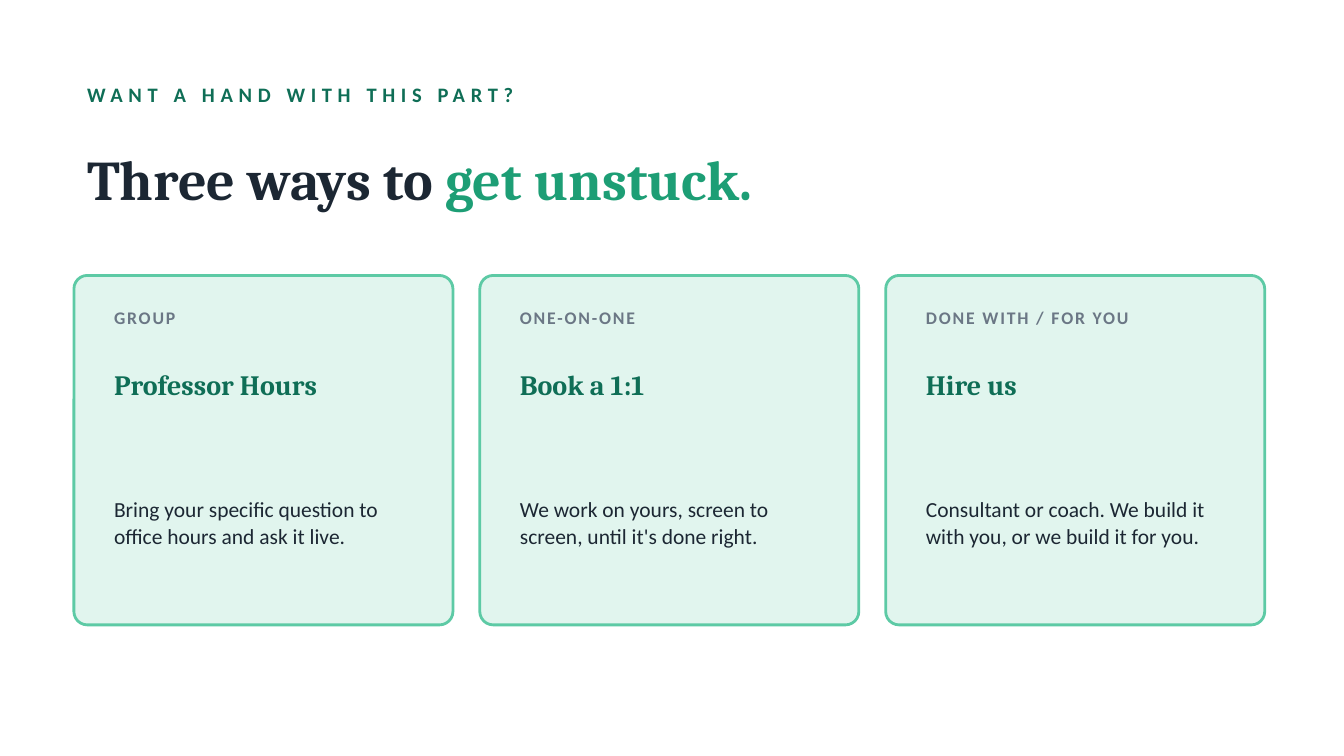
from dataclasses import dataclass

from pptx import Presentation
from pptx.dml.color import RGBColor
from pptx.enum.shapes import MSO_SHAPE
from pptx.enum.text import MSO_ANCHOR
from pptx.util import Inches, Pt


@dataclass(frozen=True)
class Theme:
    background: str = "FFFFFF"
    ink: str = "1C2733"
    muted: str = "6B7785"
    dark_green: str = "0F6E56"
    accent: str = "1D9E75"
    card_fill: str = "E1F5EE"
    card_line: str = "5DCAA5"
    heading_font: str = "Cambria"
    body_font: str = "Calibri"
    kicker_size: float = 11
    title_size: float = 30
    label_size: float = 9.5
    name_size: float = 15
    body_size: float = 11.5


THEME = Theme()

CARDS = [
    ("GROUP", "Professor Hours",
     "Bring your specific question to office hours and ask it live."),
    ("ONE-ON-ONE", "Book a 1:1",
     "We work on yours, screen to screen, until it's done right."),
    ("DONE WITH / FOR YOU", "Hire us",
     "Consultant or coach. We build it with you, or we build it for you."),
]


def rgb(color):
    return RGBColor.from_string(color)


def style_run(r, size, color, font, bold):
    r.font.size = Pt(size)
    r.font.name = font
    r.font.bold = bold
    r.font.color.rgb = rgb(color)


def add_text(s, box, text, size, color, font=THEME.body_font, bold=False, tracking=0):
    """Add a middle-anchored text box and return its paragraph; tracking is in points."""
    tf = s.shapes.add_textbox(*map(Inches, box)).text_frame
    tf.word_wrap = True
    tf.vertical_anchor = MSO_ANCHOR.MIDDLE
    p = tf.paragraphs[0]
    p.text = text
    r = p.runs[0]
    style_run(r, size, color, font, bold)
    if tracking:
        r.font._element.set("spc", str(tracking * 100))
    return p


def add_header(s, left, top, width):
    add_text(s, (left, top, width, 0.3), "WANT A HAND WITH THIS PART?",
             THEME.kicker_size, THEME.dark_green, bold=True, tracking=3)
    p = add_text(s, (left, top + 0.35, width, 0.85), "Three ways to ",
                 THEME.title_size, THEME.ink, THEME.heading_font, bold=True)
    r = p.add_run()
    r.text = "get unstuck."
    style_run(r, THEME.title_size, THEME.accent, THEME.heading_font, True)


def add_card(s, left, top, width, height, label, name, body):
    card = s.shapes.add_shape(MSO_SHAPE.ROUNDED_RECTANGLE,
                              *map(Inches, (left, top, width, height)))
    card.adjustments[0] = 0.1 / height
    card.shadow.inherit = False
    card.fill.solid()
    card.fill.fore_color.rgb = rgb(THEME.card_fill)
    card.line.color.rgb = rgb(THEME.card_line)
    card.line.width = Pt(1.5)

    x, w = left + 0.2, width - 0.37
    add_text(s, (x, top + 0.16, w, 0.3), label,
             THEME.label_size, THEME.muted, bold=True, tracking=1)
    add_text(s, (x, top + 0.46, w, 0.7), name,
             THEME.name_size, THEME.dark_green, THEME.heading_font, bold=True)
    p = add_text(s, (x, top + 1.18, w, 1.3), body, THEME.body_size, THEME.ink)
    p.line_spacing = 1.08


def add_card_row(s, left, top, card_width, height, gap):
    for i, card in enumerate(CARDS):
        add_card(s, left + i * (card_width + gap), top, card_width, height, *card)


def main():
    prs = Presentation()
    prs.slide_width, prs.slide_height = Inches(10), Inches(10 * 9 / 16)
    s = prs.slides.add_slide(prs.slide_layouts[6])
    s.background.fill.solid()
    s.background.fill.fore_color.rgb = rgb(THEME.background)
    add_header(s, 0.55, 0.55, 8.9)
    add_card_row(s, 0.55, 2.05, 2.82, 2.6, gap=0.2)
    prs.save("out.pptx")


if __name__ == "__main__":
    main()
